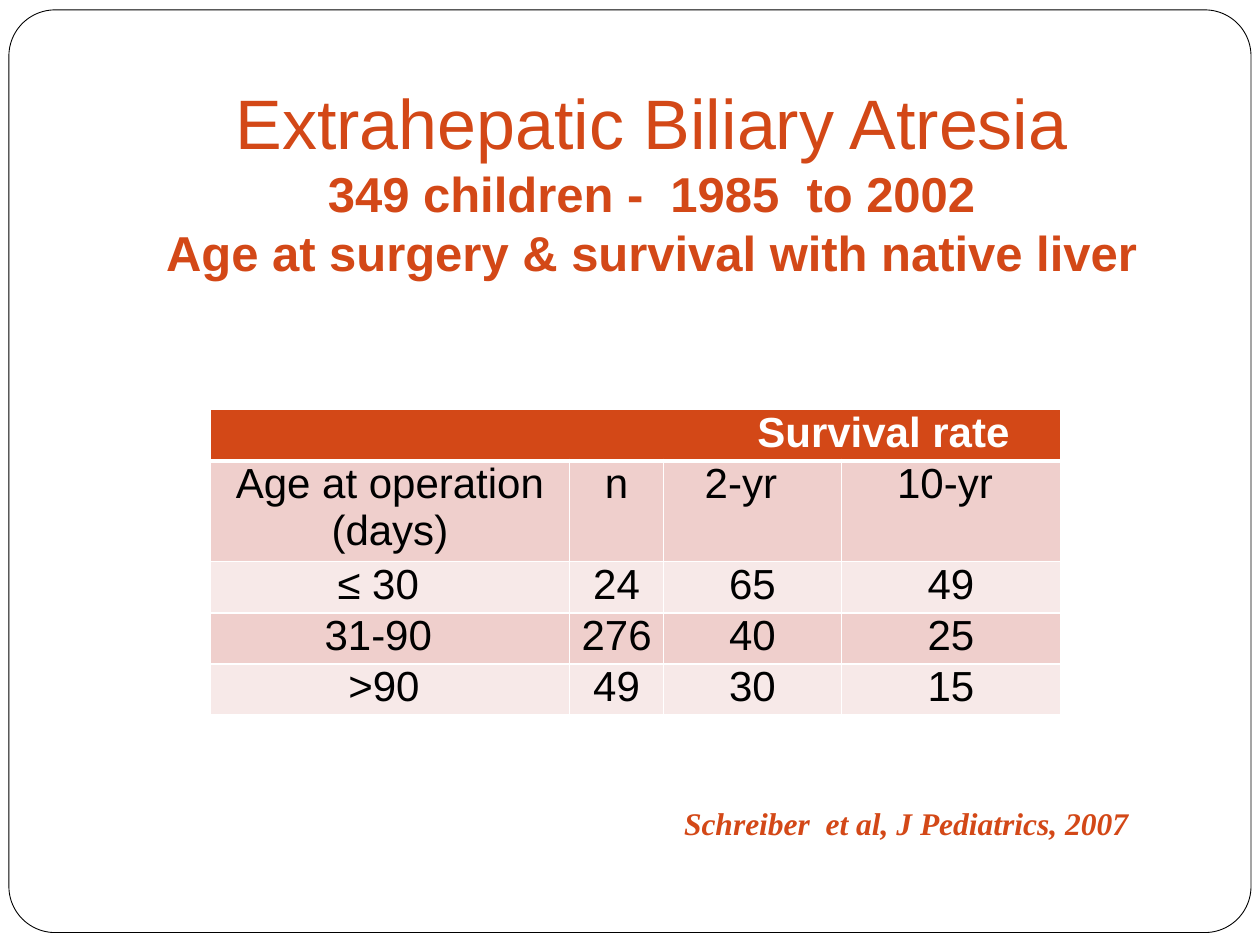
"""Build a slide with a table of survival by age at surgery for biliary atresia."""
from dataclasses import dataclass

from lxml import etree
from pptx import Presentation
from pptx import util as u
from pptx.dml.color import RGBColor
from pptx.enum import shapes, text
from pptx.oxml import ns


@dataclass(frozen=True)
class Theme:
    rust: str = "D34817"
    white: str = "FFFFFF"
    black: str = "000000"
    bands: tuple = ("F7E9E8", "EFCFCC")
    sans: str = "Arial"
    serif: str = "Times New Roman"
    title: int = 40
    lead: int = 28
    body: int = 24
    note: int = 18


theme = Theme()


def write(par, words, size, color=theme.rust, font=theme.sans, bold=False,
          slant=False, align=text.PP_ALIGN.CENTER):
    par.alignment = align
    run = par.add_run()
    run.text = words
    run.font.size = u.Pt(size)
    run.font.name = font
    run.font.bold = bold
    run.font.italic = slant
    run.font.color.rgb = RGBColor.from_string(color)


def edge(cell, side, width):
    line = etree.SubElement(cell._tc.get_or_add_tcPr(), ns.qn(f"a:ln{side}"), w=str(u.Pt(width)))
    solid = etree.SubElement(line, ns.qn("a:solidFill"))
    etree.SubElement(solid, ns.qn("a:srgbClr"), val=theme.white)


deck = Presentation()
deck.slide_width, deck.slide_height = u.Cm(25.4), u.Cm(19.05)
slide = deck.slides.add_slide(deck.slide_layouts[6])

frame = slide.shapes.add_shape(shapes.MSO_SHAPE.ROUNDED_RECTANGLE,
                               u.Cm(0.18), u.Cm(0.2), u.Cm(25.04), u.Cm(18.6))
frame.adjustments[0] = 0.05
frame.shadow.inherit = False
frame.fill.solid()
frame.fill.fore_color.rgb = RGBColor.from_string(theme.white)
frame.line.color.rgb = RGBColor.from_string(theme.black)
frame.line.width = u.Pt(0.5)

title = slide.shapes.add_textbox(u.Cm(2.34), u.Cm(0.84), u.Cm(21.59), u.Cm(5.08)).text_frame
title.word_wrap = True
title.vertical_anchor = text.MSO_ANCHOR.BOTTOM
title.margin_bottom = u.Cm(0.25)
write(title.paragraphs[0], "Extrahepatic Biliary Atresia", theme.title)
for words in ("349 children -  1985  to 2002",
              "Age at surgery & survival with native liver"):
    write(title.add_paragraph(), words, theme.lead, bold=True)

rows = [
    ("Survival rate", "", "", ""),
    ("Age at operation (days)", "n", "2-yr", "10-yr"),
    ("≤ 30", "24", "65", "49"),
    ("31-90", "276", "40", "25"),
    (">90", "49", "30", "15"),
]
widths = (7.24, 1.9, 3.58, 4.42)
height = 1.03
insets = {"Survival rate": 1.03, "2-yr": 0.47, "10-yr": 0.24,
          "≤ 30": 0.47, "31-90": 0.47, ">90": 0.24}

table = slide.shapes.add_table(len(rows), len(widths), u.Cm(4.24), u.Cm(8.26),
                               u.Cm(sum(widths)), u.Cm(height * len(rows))).table
for col, width in zip(table.columns, widths):
    col.width = u.Cm(width)
for row in table.rows:
    row.height = u.Cm(height)
table.cell(0, 0).merge(table.cell(0, len(widths) - 1))

for r, row in enumerate(rows):
    head = r == 0
    for c, words in enumerate(row):
        cell = table.cell(r, c)
        cell.margin_left = cell.margin_top = cell.margin_bottom = 0
        cell.margin_right = u.Cm(insets.get(words, 0))
        for side, width in (("L", 1), ("R", 1), ("T", 3 if r == 1 else 1), ("B", 3 if head else 1)):
            edge(cell, side, width)
        cell.fill.solid()
        cell.fill.fore_color.rgb = RGBColor.from_string(theme.rust if head else theme.bands[r % 2])
        if words:
            write(cell.text_frame.paragraphs[0], words, theme.body, bold=head,
                  color=theme.white if head else theme.black,
                  align=text.PP_ALIGN.RIGHT if head else text.PP_ALIGN.CENTER)

source = slide.shapes.add_textbox(u.Cm(13.54), u.Cm(16.08), u.Cm(9.55), u.Cm(1.02)).text_frame
source.word_wrap = False
write(source.paragraphs[0], "Schreiber  et al, J Pediatrics, 2007", theme.note,
      font=theme.serif, bold=True, slant=True, align=text.PP_ALIGN.LEFT)

deck.save("out.pptx")
